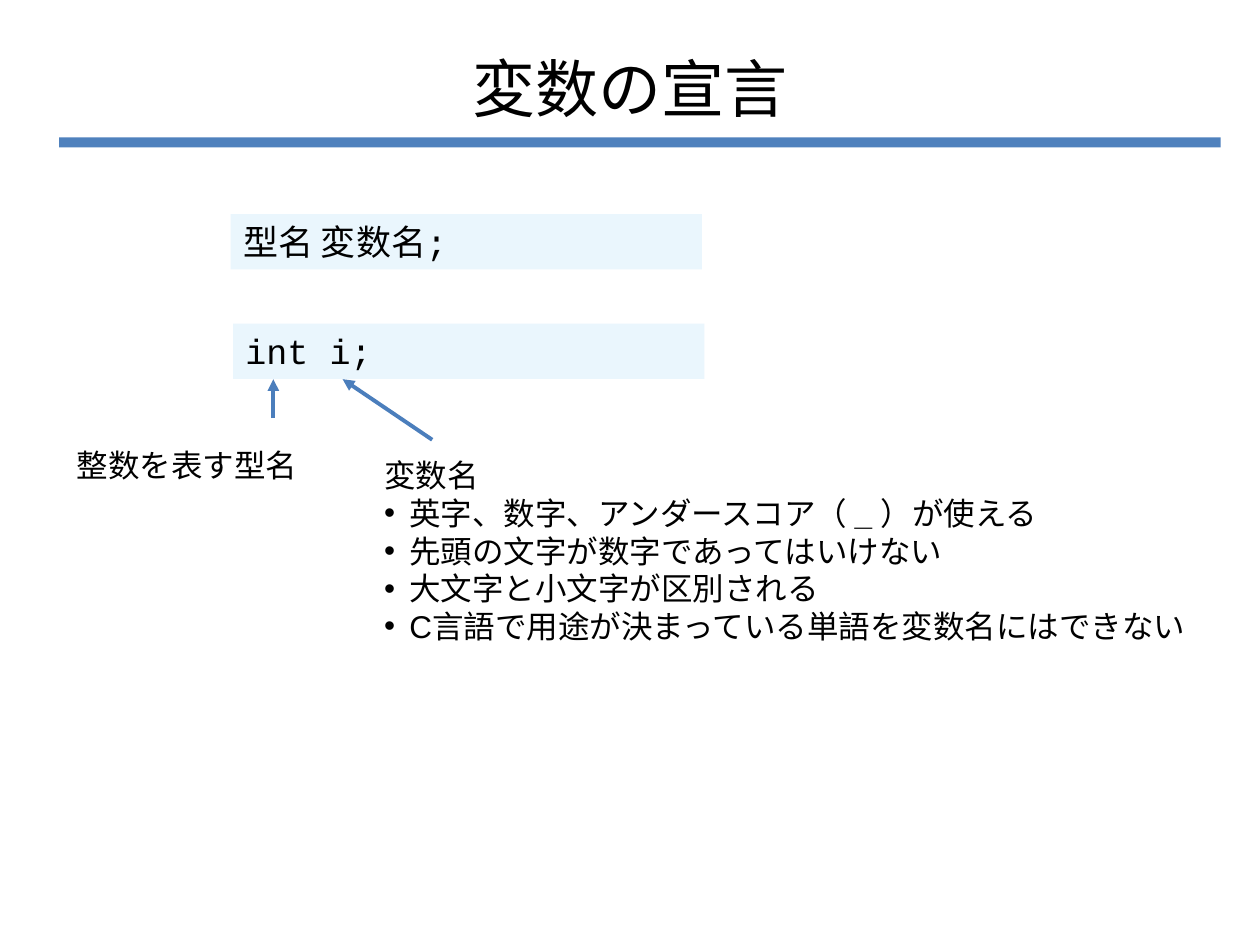
from dataclasses import dataclass

from lxml.etree import SubElement
from pptx import Presentation
from pptx.dml.color import RGBColor
from pptx.enum.shapes import MSO_CONNECTOR as Link, MSO_SHAPE as Kind
from pptx.enum.text import MSO_ANCHOR as Anchor, MSO_AUTO_SIZE as Fit, PP_ALIGN as Align
from pptx.oxml.ns import qn
from pptx.util import Pt

BLACK = RGBColor(0x00, 0x00, 0x00)
BLUE = RGBColor(0x4F, 0x81, 0xBD)
STEEL = RGBColor(0x4B, 0x7E, 0xBC)
PALE = RGBColor(0xEA, 0xF6, 0xFD)
SANS, MONO = "Arial", "Courier New"
INDENT = 14.4


@dataclass(frozen=True)
class Box:
    left: float
    top: float
    width: float
    height: float

    def area(self) -> tuple:
        return Pt(self.left), Pt(self.top), Pt(self.width), Pt(self.height)


@dataclass(frozen=True)
class Code:
    text: str
    box: Box


@dataclass(frozen=True)
class Arrow:
    start: tuple[float, float]
    end: tuple[float, float]


CODES = [
    Code("型名 変数名;", Box(131.8, 122.4, 269.3, 31.5)),
    Code("int i;", Box(133.2, 185, 269.3, 31.5)),
]
ARROWS = [
    Arrow((156.2, 239), (156.2, 216.7)),
    Arrow((247, 251.3), (195.8, 216.7)),
]
RULES = [
    [("英字、数字、アンダースコア（ ", False), ("_ ", True), ("）が使える", False)],
    [("先頭の文字が数字であってはいけない", False)],
    [("大文字と小文字が区別される", False)],
    [("C言語で用途が決まっている単語を変数名にはできない", False)],
]


def add_text(para, text: str, *, font: str = SANS, size: float = 18,
             bold: bool = False, align: Align = Align.LEFT) -> None:
    para.alignment = align
    run = para.add_run()
    run.text = text
    style = run.font
    style.name, style.size, style.bold = font, Pt(size), bold
    style.color.rgb = BLACK


def add_frame(slide, box: Box, wrap: bool = True, fit: Fit = Fit.SHAPE_TO_FIT_TEXT):
    frame = slide.shapes.add_textbox(*box.area()).text_frame
    frame.word_wrap, frame.auto_size = wrap, fit
    return frame


def add_bar(slide, box: Box, color: RGBColor):
    bar = slide.shapes.add_shape(Kind.RECTANGLE, *box.area())
    bar.shadow.inherit = False
    bar.fill.solid()
    bar.fill.fore_color.rgb = color
    bar.line.fill.background()
    return bar


def add_code(slide, code: Code) -> None:
    frame = add_bar(slide, code.box, PALE).text_frame
    frame.word_wrap, frame.auto_size = True, Fit.SHAPE_TO_FIT_TEXT
    frame.vertical_anchor = Anchor.TOP
    add_text(frame.paragraphs[0], code.text, font=MONO, size=20)


def add_arrow(slide, arrow: Arrow) -> None:
    ends = [Pt(v) for v in (*arrow.start, *arrow.end)]
    link = slide.shapes.add_connector(Link.STRAIGHT, *ends)
    link.line.color.rgb = STEEL
    link.line.width = Pt(2.25)
    props = link.line._get_or_add_ln()
    SubElement(props, qn("a:tailEnd"), type="triangle")
    SubElement(link._element.spPr, qn("a:effectLst"))


def set_bullet(para) -> None:
    props = para._p.get_or_add_pPr()
    props.set("marL", str(Pt(INDENT)))
    props.set("indent", str(-Pt(INDENT)))
    SubElement(props, qn("a:buFont"), typeface=SANS)
    SubElement(props, qn("a:buChar"), char="•")


def main() -> None:
    deck = Presentation()
    deck.slide_width, deck.slide_height = Pt(720), Pt(540)
    slide = deck.slides.add_slide(deck.slide_layouts[6])

    add_bar(slide, Box(33.8, 78.5, 663.8, 5.8), BLUE)
    title = add_frame(slide, Box(36, 21.6, 648, 56.9), fit=Fit.NONE)
    title.vertical_anchor = Anchor.MIDDLE
    add_text(title.paragraphs[0], "変数の宣言", size=36, align=Align.CENTER)

    for code in CODES:
        add_code(slide, code)

    label = add_frame(slide, Box(36.7, 251.3, 141.8, 29))
    add_text(label.paragraphs[0], "整数を表す型名")

    notes = add_frame(slide, Box(212.4, 257, 481, 116.6), wrap=False)
    add_text(notes.paragraphs[0], "変数名")
    for rule in RULES:
        para = notes.add_paragraph()
        set_bullet(para)
        for text, bold in rule:
            add_text(para, text, bold=bold)

    for arrow in ARROWS:
        add_arrow(slide, arrow)

    deck.save("out.pptx")


if __name__ == "__main__":
    main()
